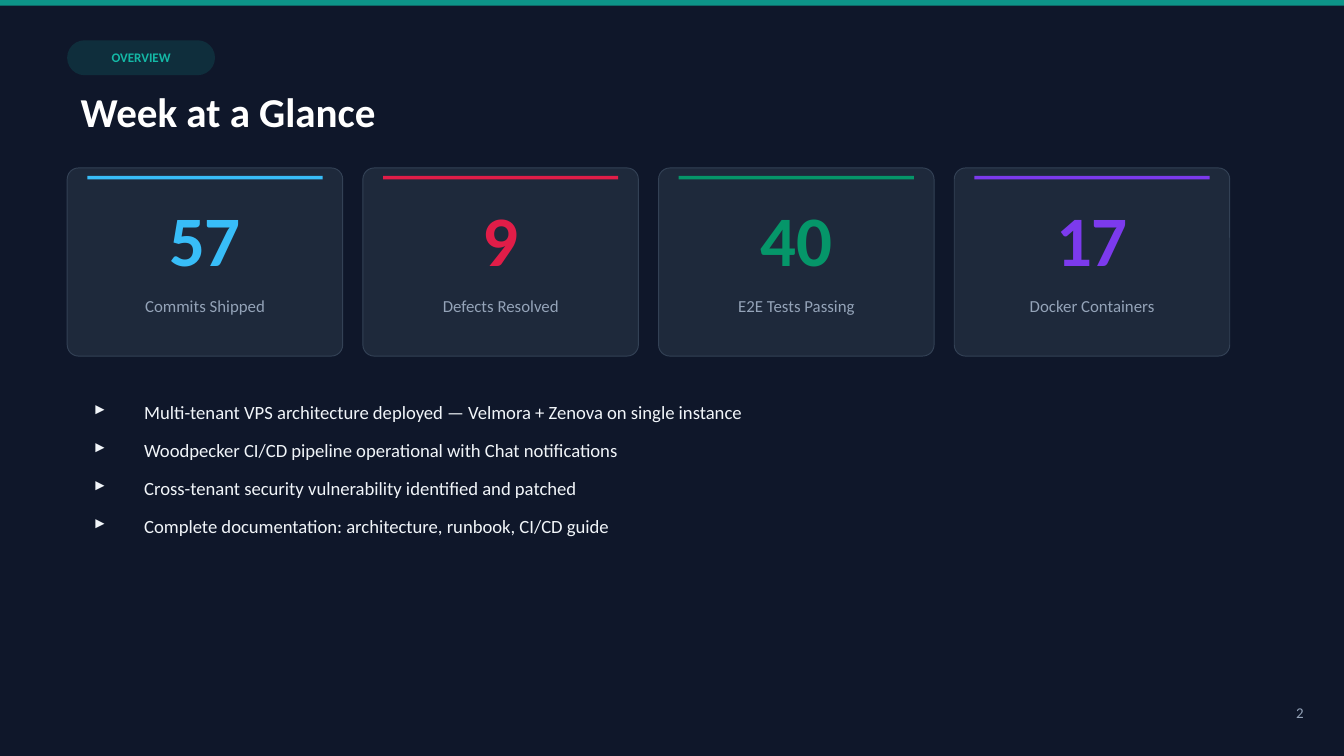
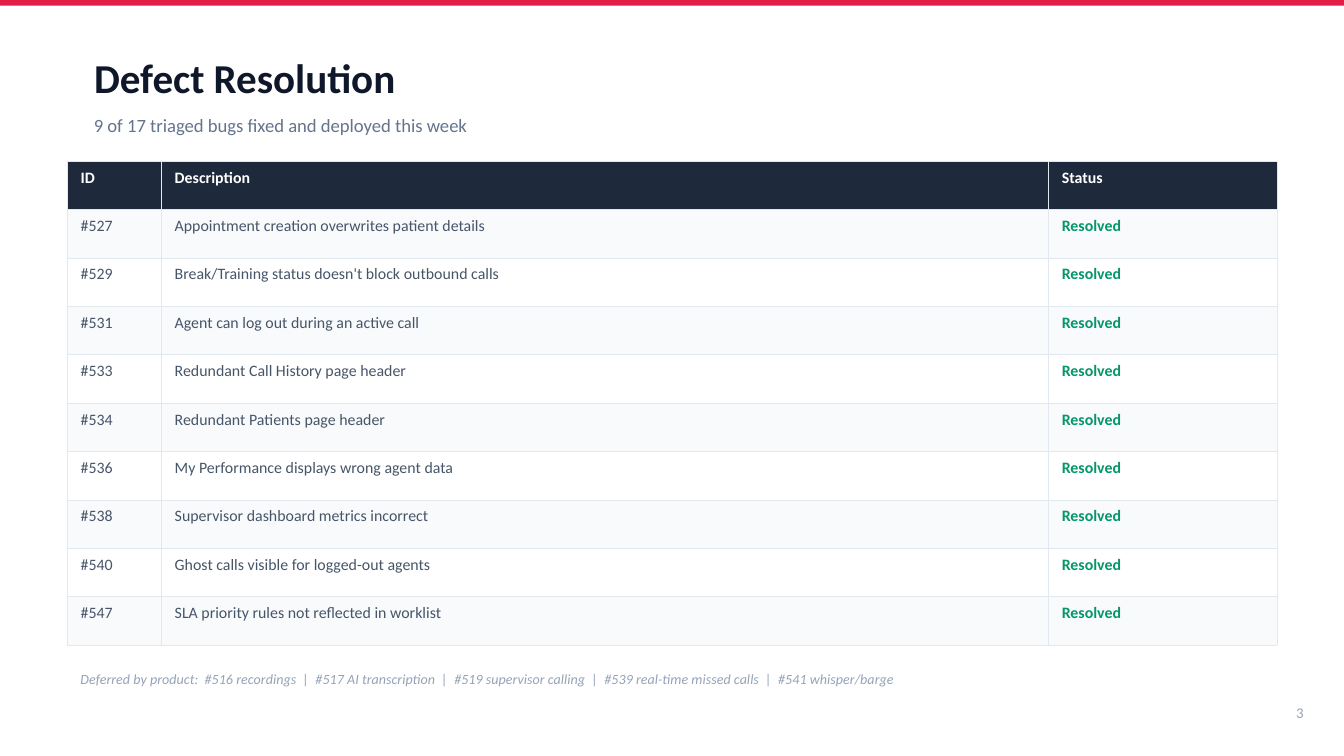
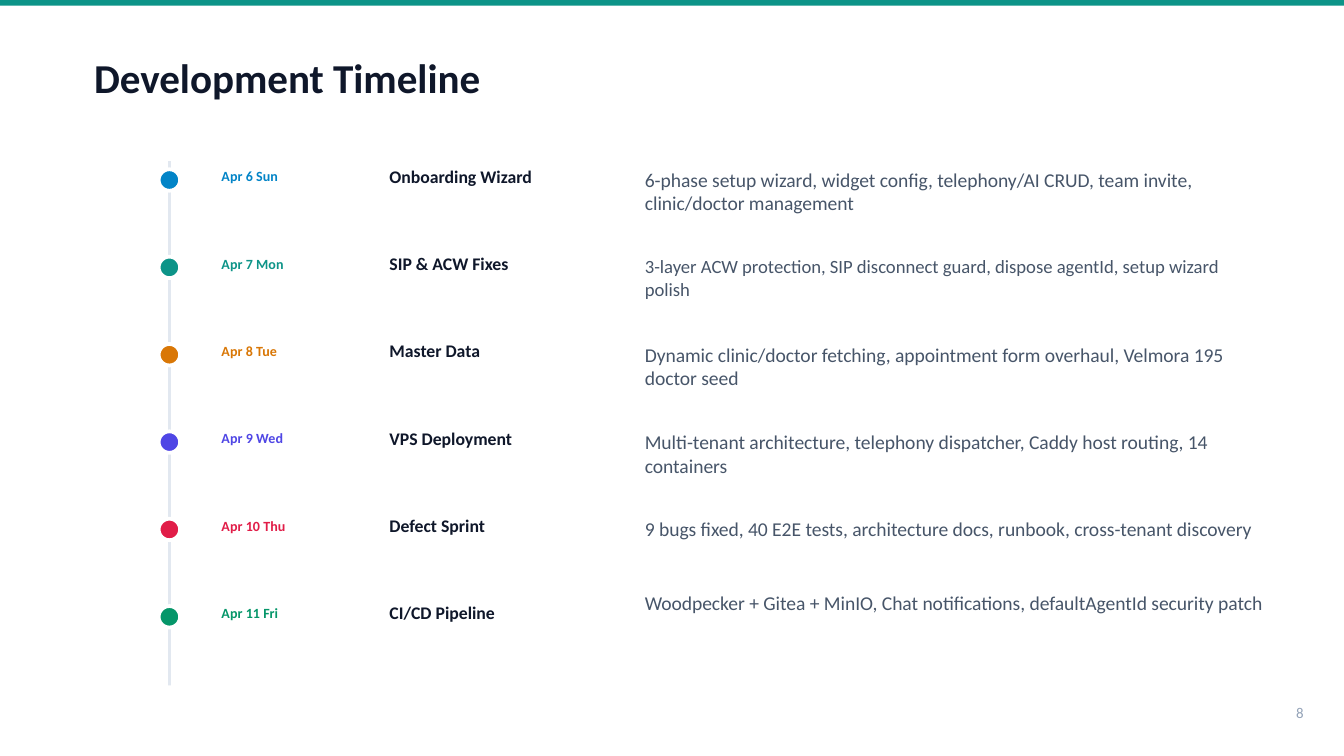
from pptx import Presentation
from pptx.dml.color import RGBColor
from pptx.enum.shapes import MSO_SHAPE as Shape
from pptx.enum.text import MSO_ANCHOR as Anchor, MSO_AUTO_SIZE as AutoSize, PP_ALIGN as Align
from pptx.oxml import parse_xml
from pptx.oxml.ns import nsdecls, qn
from pptx.oxml.xmlchemy import OxmlElement
from pptx.util import Pt

WHITE = RGBColor(0xFF, 0xFF, 0xFF)
NAVY = RGBColor(0x0F, 0x17, 0x2A)
PANEL = RGBColor(0x1E, 0x29, 0x3B)
PANEL_EDGE = RGBColor(0x33, 0x41, 0x55)
BODY = RGBColor(0x47, 0x55, 0x69)
SUBTLE = RGBColor(0x64, 0x74, 0x8B)
MUTED = RGBColor(0x94, 0xA3, 0xB8)
RULE = RGBColor(0xE2, 0xE8, 0xF0)
PALE = RGBColor(0xF1, 0xF5, 0xF9)
STRIPE = RGBColor(0xF8, 0xFA, 0xFC)
TEAL = RGBColor(0x0D, 0x94, 0x88)
MINT = RGBColor(0x14, 0xB8, 0xA6)
SKY = RGBColor(0x38, 0xBD, 0xF8)
BLUE = RGBColor(0x02, 0x84, 0xC7)
RED = RGBColor(0xE1, 0x1D, 0x48)
GREEN = RGBColor(0x05, 0x96, 0x69)
PURPLE = RGBColor(0x7C, 0x3A, 0xED)
INDIGO = RGBColor(0x4F, 0x46, 0xE5)
AMBER = RGBColor(0xD9, 0x77, 0x06)

WIDTH, HEIGHT = 720, 405
MARGIN = 36


def points(box):
    return [Pt(length) for length in box]


def assign(target, values):
    for name, value in values.items():
        setattr(target, name, value)


class Deck:
    font = "Calibri"

    def __init__(self):
        self.prs = Presentation()
        assign(self.prs, {"slide_width": Pt(WIDTH), "slide_height": Pt(HEIGHT)})
        self.slide = None

    def start(self, title, number, accent, background=WHITE, ink=NAVY,
              title_box=(43.2, 25.2, 576, 32.4)):
        self.slide = self.prs.slides.add_slide(self.prs.slide_layouts[5])
        self.slide.background.fill.solid()
        self.slide.background.fill.fore_color.rgb = background
        self.shape((0, 0, WIDTH, 3), accent)
        heading = self.slide.shapes.title
        assign(heading, dict(zip(("left", "top", "width", "height"), points(title_box))))
        self.fill_frame(heading.text_frame, [title], 22, ink, bold=True)
        self.text((669.6, 370.8, 36, 21.6), str(number), 8, MUTED, align=Align.RIGHT)

    def style(self, paragraph, size, color, bold=False, italic=False, align=Align.LEFT):
        paragraph.alignment = align
        assign(paragraph.font, {"name": self.font, "size": Pt(size), "bold": bold, "italic": italic})
        paragraph.font.color.rgb = color

    def fill_frame(self, frame, lines, size, color, anchor=Anchor.MIDDLE, **look):
        assign(frame, {"word_wrap": True, "auto_size": AutoSize.NONE, "vertical_anchor": anchor})
        for index, line in enumerate(lines):
            paragraph = frame.add_paragraph() if index else frame.paragraphs[0]
            paragraph.text = line
            self.style(paragraph, size, color, **look)

    def text(self, box, line, size, color, **look):
        frame = self.slide.shapes.add_textbox(*points(box)).text_frame
        self.fill_frame(frame, [line], size, color, **look)

    def bullets(self, box, lines, size, color):
        frame = self.slide.shapes.add_textbox(*points(box)).text_frame
        frame.text = "\n".join(lines)
        for paragraph in frame.paragraphs:
            properties = paragraph._p.get_or_add_pPr()
            properties.set("marL", str(Pt(27)))
            properties.set("indent", str(-Pt(27)))
            mark = OxmlElement("a:buChar")
            mark.set("char", "▸")
            properties.append(mark)
            assign(paragraph, {"line_spacing": 1.2, "space_after": Pt(6)})
            self.style(paragraph, size, color)
        assign(frame, {"word_wrap": True, "vertical_anchor": Anchor.TOP})

    def shape(self, box, fill, kind=Shape.RECTANGLE, edge=None, edge_width=0,
              rounding=None, opacity=None):
        item = self.slide.shapes.add_shape(kind, *points(box))
        item.shadow.inherit = False
        item.fill.solid()
        item.fill.fore_color.rgb = fill
        if edge is None:
            item.line.fill.background()
        else:
            item.line.color.rgb = edge
            item.line.width = Pt(edge_width)
        if rounding is not None:
            item.adjustments[0] = rounding
        if opacity is not None:
            alpha = OxmlElement("a:alpha")
            alpha.set("val", str(opacity * 1000))
            item._element.spPr.find(qn("a:solidFill"))[0].append(alpha)

    def table(self, box, widths, rows, looks):
        grid = self.slide.shapes.add_table(len(rows), len(widths), *points(box)).table
        grid.horz_banding = False
        for column, width in zip(grid.columns, widths):
            column.width = Pt(width)
        for r, row in enumerate(rows):
            grid.rows[r].height = Pt(box[3] / len(rows))
            for c, value in enumerate(row):
                cell = grid.cell(r, c)
                fill, look = looks(r, c)
                cell.text = value
                self.style(cell.text_frame.paragraphs[0], **look)
                cell.fill.solid()
                cell.fill.fore_color.rgb = fill
                self.borders(cell)

    def borders(self, cell):
        properties = cell._tc.get_or_add_tcPr()
        for position, side in enumerate("LRTB"):
            properties.insert(position, parse_xml(
                f'<a:ln{side} {nsdecls("a")} w="{Pt(0.3)}"><a:solidFill>'
                f'<a:srgbClr val="{RULE}"/></a:solidFill></a:ln{side}>'))


def overview(deck):
    deck.start("Week at a Glance", 2, TEAL, NAVY, WHITE, (MARGIN, 43.2, 360, 32.4))
    pill = (MARGIN, 21.6, 79.2, 18.72)
    deck.shape(pill, MINT, Shape.ROUNDED_RECTANGLE, rounding=0.5, opacity=15)
    deck.text(pill, "OVERVIEW", 7, MINT, bold=True, align=Align.CENTER)

    metrics = [
        ("57", "Commits Shipped", SKY),
        ("9", "Defects Resolved", RED),
        ("40", "E2E Tests Passing", GREEN),
        ("17", "Docker Containers", PURPLE),
    ]
    card_width, gap = 147.6, 10.8
    for index, (count, label, accent) in enumerate(metrics):
        left = MARGIN + index * (card_width + gap)
        deck.shape((left, 90, card_width, 100.8), PANEL, Shape.ROUNDED_RECTANGLE,
                   PANEL_EDGE, 0.5, rounding=0.06)
        deck.shape((left + gap, 94.3, card_width - 2 * gap, 1.8), accent)
        deck.text((left, 100.8, card_width, 54), count, 38, accent, bold=True, align=Align.CENTER)
        deck.text((left, 154.8, card_width, 25.2), label, 9, MUTED,
                  anchor=Anchor.TOP, align=Align.CENTER)

    deck.bullets((43.2, 208.8, 612, 144), [
        "Multi-tenant VPS architecture deployed — Velmora + Zenova on single instance",
        "Woodpecker CI/CD pipeline operational with Chat notifications",
        "Cross-tenant security vulnerability identified and patched",
        "Complete documentation: architecture, runbook, CI/CD guide",
    ], 10, PALE)


def defects(deck):
    deck.start("Defect Resolution", 3, RED)
    deck.text((43.2, 56.16, 576, 21.6), "9 of 17 triaged bugs fixed and deployed this week", 10, SUBTLE)
    resolved = [
        ("#527", "Appointment creation overwrites patient details"),
        ("#529", "Break/Training status doesn't block outbound calls"),
        ("#531", "Agent can log out during an active call"),
        ("#533", "Redundant Call History page header"),
        ("#534", "Redundant Patients page header"),
        ("#536", "My Performance displays wrong agent data"),
        ("#538", "Supervisor dashboard metrics incorrect"),
        ("#540", "Ghost calls visible for logged-out agents"),
        ("#547", "SLA priority rules not reflected in worklist"),
    ]

    def looks(row, column):
        if row == 0:
            return PANEL, {"size": 8.5, "color": WHITE, "bold": True}
        is_status = column == 2
        look = {"size": 8.5, "color": GREEN if is_status else BODY, "bold": is_status}
        return (STRIPE if row % 2 else WHITE), look

    rows = [("ID", "Description", "Status")] + [(*defect, "Resolved") for defect in resolved]
    deck.table((MARGIN, 86.4, 648, 259.2), (50.4, 475.2, 122.4), rows, looks)
    deferred = ["#516 recordings", "#517 AI transcription", "#519 supervisor calling",
                "#539 real-time missed calls", "#541 whisper/barge"]
    deck.text((MARGIN, 352.8, 648, 21.6), "Deferred by product:  " + "  |  ".join(deferred),
              7.5, MUTED, italic=True)


def timeline(deck):
    deck.start("Development Timeline", 8, TEAL)
    top, step = 86.4, 46.8
    deck.shape((90, top, 1.5, 280.8), RULE)
    milestones = [
        ("Apr 6 Sun", BLUE, "Onboarding Wizard", 10.5, 0,
         "6-phase setup wizard, widget config, telephony/AI CRUD, team invite, clinic/doctor management"),
        ("Apr 7 Mon", TEAL, "SIP & ACW Fixes", 10, 0,
         "3-layer ACW protection, SIP disconnect guard, dispose agentId, setup wizard polish"),
        ("Apr 8 Tue", AMBER, "Master Data", 10.5, 0,
         "Dynamic clinic/doctor fetching, appointment form overhaul, Velmora 195 doctor seed"),
        ("Apr 9 Wed", INDIGO, "VPS Deployment", 10.5, 0,
         "Multi-tenant architecture, telephony dispatcher, Caddy host routing, 14 containers"),
        ("Apr 10 Thu", RED, "Defect Sprint", 10.5, 0,
         "9 bugs fixed, 40 E2E tests, architecture docs, runbook, cross-tenant discovery"),
        ("Apr 11 Fri", GREEN, "CI/CD Pipeline", 10.5, 7.2,
         "Woodpecker + Gitea + MinIO, Chat notifications, defaultAgentId security patch"),
    ]
    for index, (day, accent, milestone, size, lift, details) in enumerate(milestones):
        y = top + index * step
        deck.shape((85, y + 4.3, 11.5, 11.5), accent, Shape.OVAL, WHITE, 2)
        deck.text((111.6, y, 86.4, 15.84), day, 7.5, accent, bold=True)
        deck.text((201.6, y, 129.6, 15.84), milestone, 9.5, NAVY, bold=True)
        deck.text((338.4, y - lift, 345.6, 39.6), details, size, BODY, anchor=Anchor.TOP)


def main():
    deck = Deck()
    for build in (overview, defects, timeline):
        build(deck)
    deck.prs.save("out.pptx")


if __name__ == "__main__":
    main()
